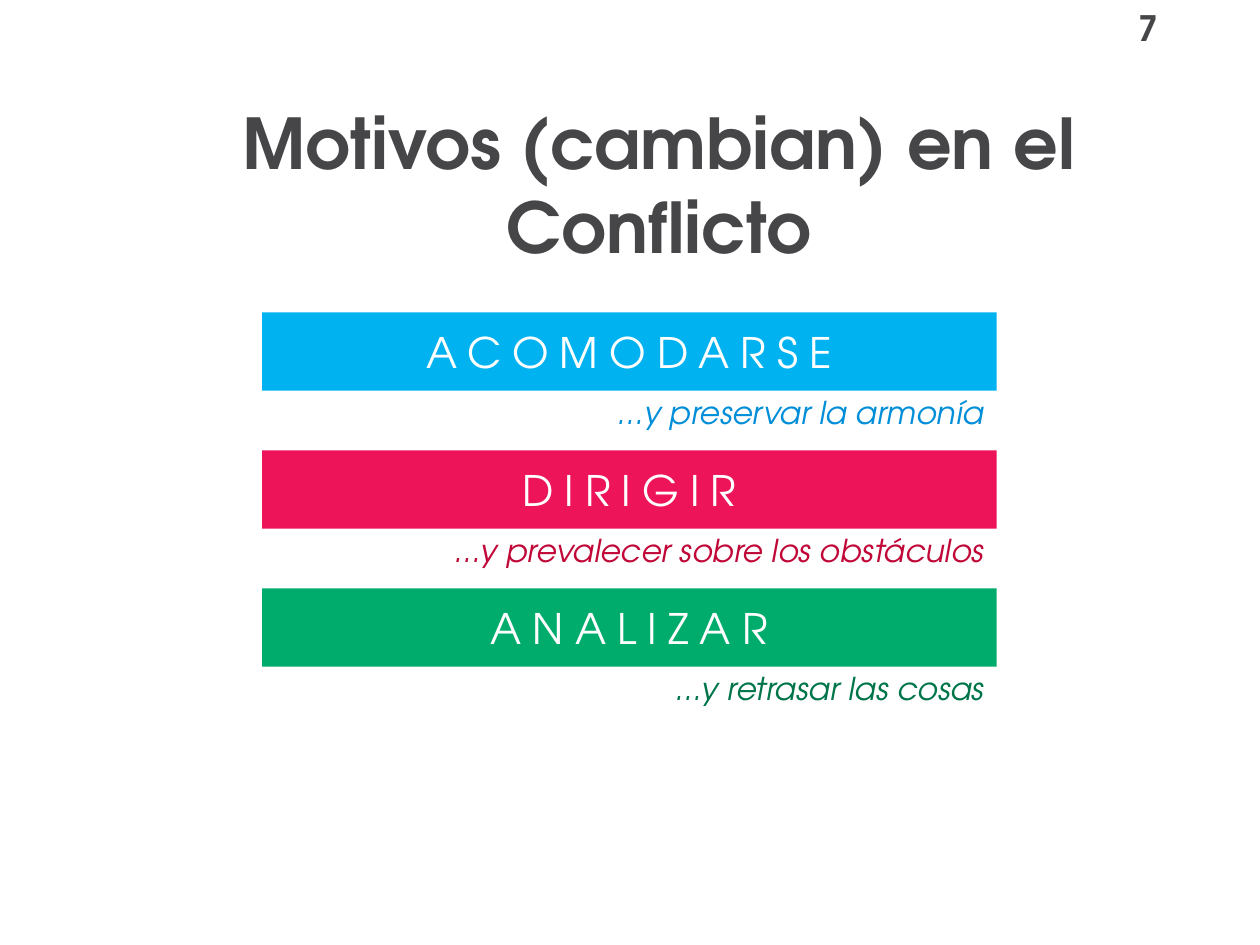
"""Build the slide on motives that change in conflict."""
from pptx import Presentation
from pptx.dml.color import RGBColor
from pptx.enum.shapes import MSO_SHAPE as Shape
from pptx.enum.text import MSO_ANCHOR as Anchor, PP_ALIGN as Align
from pptx.util import Inches, Pt

FONT = "TeX Gyre Adventor"
GRAY = RGBColor(0x46, 0x46, 0x49)
WHITE = RGBColor(0xFF, 0xFF, 0xFF)
SKY = RGBColor(0x00, 0xB3, 0xF0)
BLUE = RGBColor(0x00, 0x8E, 0xD8)
PINK = RGBColor(0xED, 0x14, 0x5A)
RED = RGBColor(0xC0, 0x07, 0x37)
GREEN = RGBColor(0x00, 0xAC, 0x6C)
DARK_GREEN = RGBColor(0x00, 0x75, 0x4A)

MOTIVES = [
    ("ACOMODARSE", SKY, "...y preservar la armonía", BLUE),
    ("DIRIGIR", PINK, "...y prevalecer sobre los obstáculos", RED),
    ("ANALIZAR", GREEN, "...y retrasar las cosas", DARK_GREEN),
]
LEFT, WIDTH = 2.08, 5.83
FIRST_TOP, STEP = 2.48, 1.095


def write(box, text, size, color, align, bold=False, italic=False):
    box.text_frame.word_wrap = True
    para = box.text_frame.paragraphs[0]
    para.alignment = align
    span = para.add_run()
    span.text = text
    font = para.font
    font.name, font.size = FONT, Pt(size)
    font.bold, font.italic = bold, italic
    font.color.rgb = color
    return para


def add_text(left, top, width, height, *style, **flags):
    box = page.shapes.add_textbox(
        Inches(left), Inches(top), Inches(width), Inches(height))
    return write(box, *style, **flags)


deck = Presentation()
deck.slide_width, deck.slide_height = Inches(10), Inches(7.5)
page = deck.slides.add_slide(deck.slide_layouts[6])

add_text(8.94, 0, 0.94, 0.44, "7", 20, GRAY, Align.LEFT, bold=True)
add_text(1.68, 0.74, 7.1, 1.45, "Motivos (cambian) en el Conflicto",
         40, GRAY, Align.CENTER, bold=True)

for row, (motive, fill, result, color) in enumerate(MOTIVES):
    top = FIRST_TOP + row * STEP
    bar = page.shapes.add_shape(
        Shape.RECTANGLE, Inches(LEFT), Inches(top), Inches(WIDTH), Inches(0.62))
    bar.shadow.inherit = False
    bar.fill.solid()
    bar.fill.fore_color.rgb = fill
    bar.line.fill.background()
    bar.text_frame.vertical_anchor = Anchor.MIDDLE
    para = write(bar, motive, 24, WHITE, Align.CENTER)
    para.runs[0].font._element.set("spc", "640")

    para = add_text(LEFT, top + 0.59, WIDTH, 0.4, result, 18, color,
                    Align.RIGHT, italic=True)
    para.space_after = Pt(6)

deck.save("out.pptx")
